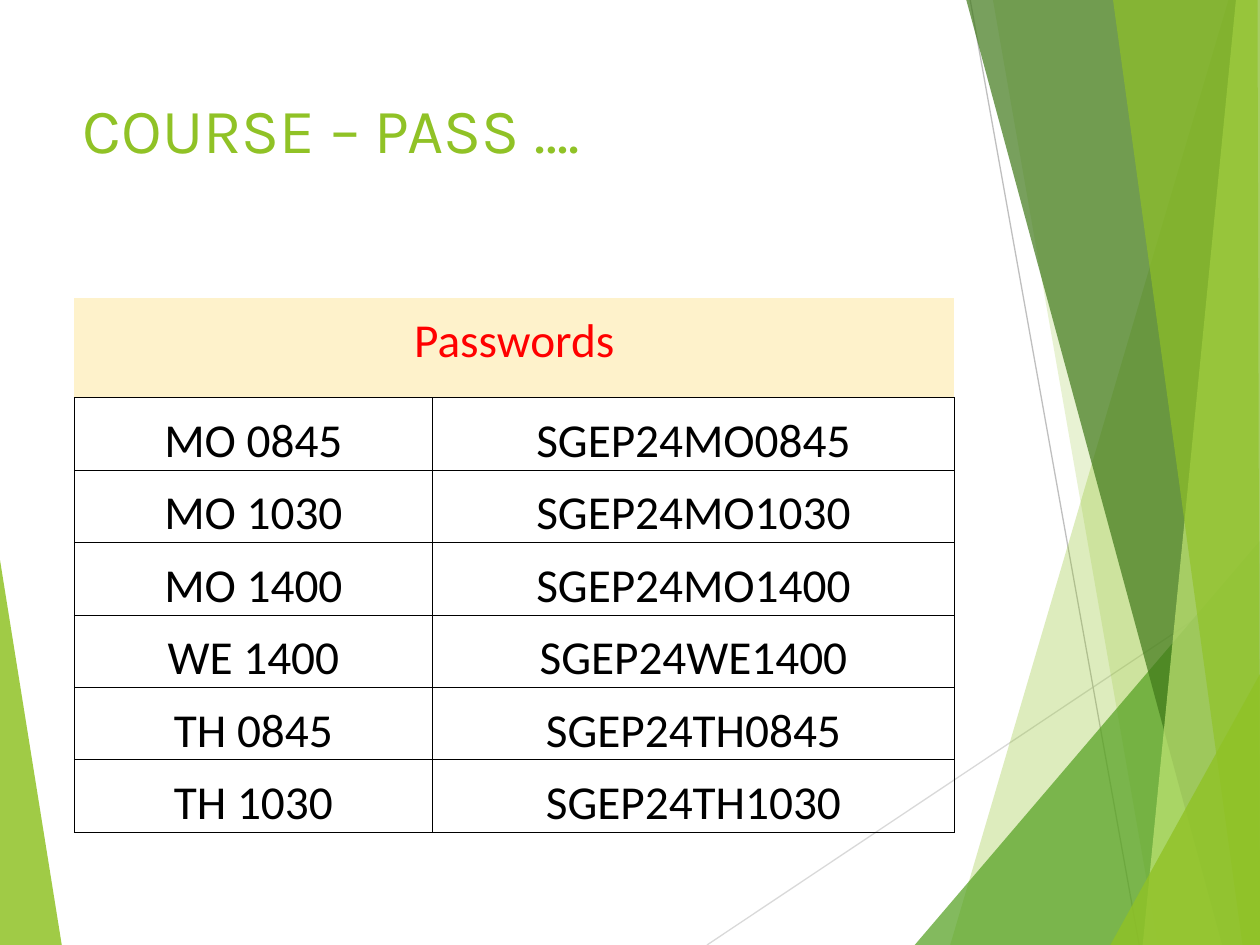
"""Build the course password slide with its green facet decoration."""
from lxml import etree
from pptx import Presentation
from pptx.dml.color import RGBColor
from pptx.enum import shapes, text
from pptx.oxml import ns
from pptx.util import Pt

GREEN = RGBColor(0x90, 0xC2, 0x26)
MID_GREEN = RGBColor(0x54, 0xA0, 0x21)
DARK_GREEN = RGBColor(0x3F, 0x78, 0x19)
LIGHT_GREEN = RGBColor(0xC0, 0xE4, 0x74)
PALE_GRAY = RGBColor(0xD9, 0xD9, 0xD9)
GRAY = RGBColor(0xBF, 0xBF, 0xBF)
CREAM = RGBColor(0xFE, 0xF2, 0xCB)
RED = RGBColor(0xFF, 0, 0)
BLACK = RGBColor(0, 0, 0)

WIDTH, HEIGHT = 720, 540
TITLE = "COURSE – PASS …."
HEADER = "Passwords"
PASSWORDS = [
    ("MO 0845", "SGEP24MO0845"),
    ("MO 1030", "SGEP24MO1030"),
    ("MO 1400", "SGEP24MO1400"),
    ("WE 1400", "SGEP24WE1400"),
    ("TH 0845", "SGEP24TH0845"),
    ("TH 1030", "SGEP24TH1030"),
]
COLUMN_WIDTHS = (204.8, 298.2)
HEADER_HEIGHT, ROW_HEIGHT = 57.2, 41.4
COLUMN_INSETS = ((2, 2, 2, 0), (0.7, 0.7, 0.7, 0))
HEADER_INSETS = (18, 8.6, 18, 8.6)

LEFT_FACET = (GREEN, 85, [(0, 320), (35.3, HEIGHT), (0, HEIGHT)])
RAYS = [
    (PALE_GRAY, (404, HEIGHT), (WIDTH, 329)),
    (GRAY, (554.4, 0), (651, HEIGHT)),
]
RIGHT_FACETS = [
    (GREEN, 30, [(702, 0), (543, HEIGHT), (WIDTH, HEIGHT), (WIDTH, 0)]),
    (GREEN, 20, [(567.4, 0), (661.7, HEIGHT), (WIDTH, HEIGHT), (WIDTH, 0)]),
    (MID_GREEN, 72, [(522.7, HEIGHT), (WIDTH, 309), (WIDTH, HEIGHT)]),
    (DARK_GREEN, 70, [(552.2, 0), (698.4, HEIGHT), (WIDTH, HEIGHT), (WIDTH, 0)]),
    (LIGHT_GREEN, 70, [(706.3, 0), (653, HEIGHT), (WIDTH, HEIGHT), (WIDTH, 0)]),
    (GREEN, 65, [(636, 0), (710, HEIGHT), (WIDTH, HEIGHT), (718.6, 0)]),
    (GREEN, 80, [(634.5, HEIGHT), (WIDTH, 385.2), (WIDTH, HEIGHT)]),
]


def write(frame, content, font="Calibri", size=27, color=BLACK, align=text.PP_ALIGN.CENTER):
    paragraph = frame.paragraphs[0]
    paragraph.alignment = align
    run = paragraph.add_run()
    run.text = content
    run.font.name, run.font.size = font, Pt(size)
    run.font.color.rgb = color


def add_facet(slide, color, opacity, points):
    corners = [(Pt(x), Pt(y)) for x, y in points]
    builder = slide.shapes.build_freeform(*corners[0])
    builder.add_line_segments(corners[1:], close=True)
    shape = builder.convert_to_shape()
    shape.shadow.inherit = False
    shape.fill.solid()
    shape.fill.fore_color.rgb = color
    shape.line.fill.background()
    color_element = shape.fill._xPr.find(".//" + ns.qn("a:srgbClr"))
    etree.SubElement(color_element, ns.qn("a:alpha"), val=str(opacity * 1000))


def add_ray(slide, color, start, end):
    ends = [Pt(value) for value in start + end]
    connector = slide.shapes.add_connector(shapes.MSO_CONNECTOR.STRAIGHT, *ends)
    connector.line.color.rgb = color
    connector.line.width = Pt(0.75)
    etree.SubElement(connector._element.spPr, ns.qn("a:effectLst"))


def set_borders(cell, visible):
    properties = cell._tc.get_or_add_tcPr()
    for position, side in enumerate(("L", "R", "T", "B")):
        line = etree.Element(ns.qn("a:ln" + side), w=str(Pt(0.5)))
        if side in visible:
            fill = etree.SubElement(line, ns.qn("a:solidFill"))
            etree.SubElement(fill, ns.qn("a:srgbClr"), val=str(BLACK))
        else:
            etree.SubElement(line, ns.qn("a:noFill"))
        properties.insert(position, line)


def fill_cell(cell, content, insets, anchor, borders, color=BLACK, background=None):
    margins = [Pt(inset) for inset in insets]
    cell.margin_left, cell.margin_top, cell.margin_right, cell.margin_bottom = margins
    cell.vertical_anchor = anchor
    if background is None:
        cell.fill.background()
    else:
        cell.fill.solid()
        cell.fill.fore_color.rgb = background
    set_borders(cell, borders)
    if content:
        write(cell.text_frame, content, color=color)


def add_passwords(slide):
    heights = [HEADER_HEIGHT] + [ROW_HEIGHT] * len(PASSWORDS)
    table = slide.shapes.add_table(
        len(heights), len(COLUMN_WIDTHS), Pt(42.4), Pt(170.1),
        Pt(sum(COLUMN_WIDTHS)), Pt(sum(heights))).table
    table.first_row = table.horz_banding = False
    for column, width in zip(table.columns, COLUMN_WIDTHS):
        column.width = Pt(width)
    for row, height in zip(table.rows, heights):
        row.height = Pt(height)
    table.cell(0, 0).merge(table.cell(0, 1))
    for index, content in enumerate((HEADER, "")):
        fill_cell(table.cell(0, index), content, HEADER_INSETS,
                  text.MSO_ANCHOR.TOP, "B", RED, CREAM)
    for row, entries in enumerate(PASSWORDS, 1):
        for column, content in enumerate(entries):
            fill_cell(table.cell(row, column), content, COLUMN_INSETS[column],
                      text.MSO_ANCHOR.BOTTOM, "LRTB")


def main():
    presentation = Presentation()
    presentation.slide_width, presentation.slide_height = Pt(WIDTH), Pt(HEIGHT)
    slide = presentation.slides.add_slide(presentation.slide_layouts[6])
    add_facet(slide, *LEFT_FACET)
    for ray in RAYS:
        add_ray(slide, *ray)
    for facet in RIGHT_FACETS:
        add_facet(slide, *facet)
    title = slide.shapes.add_textbox(Pt(40.3), Pt(48.2), Pt(507.6), Pt(103.7))
    title.text_frame.word_wrap = True
    write(title.text_frame, TITLE, "Karla", 36, GREEN, text.PP_ALIGN.LEFT)
    add_passwords(slide)
    presentation.save("out.pptx")


if __name__ == "__main__":
    main()
